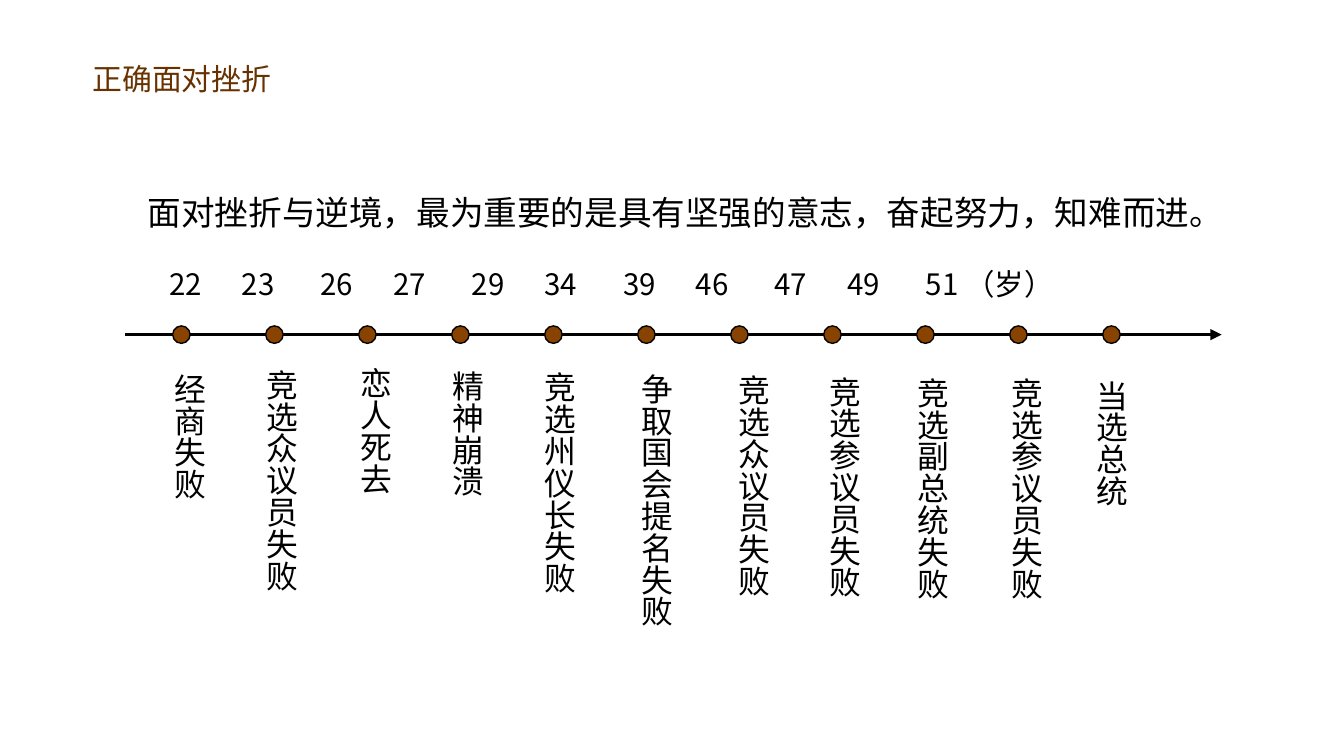
from pptx import Presentation
from pptx.dml.color import RGBColor
from pptx.enum.shapes import MSO_CONNECTOR as Link, MSO_SHAPE as Kind
from pptx.enum.text import MSO_AUTO_SIZE as Fit
from pptx.oxml.ns import qn
from pptx.util import Inches, Pt
from lxml.etree import SubElement as Sub

FACE = "Noto Sans CJK SC"
BLACK = RGBColor(0x00, 0x00, 0x00)
BROWN = RGBColor(0x67, 0x32, 0x00)
RUST = RGBColor(0x89, 0x43, 0x00)

WIDE = 10
HIGH = WIDE * 9 / 16
AXIS = 2.49
FIRST = 1.35
STEP = 6.92 / 10
PAIR = 5.63 / 5
DOT = 0.13

AGES = [22, 23, 26, 27, 29, 34, 39, 46, 47, 49, 51]
EVENTS = [
    ("经商失败", -0.24, 0.19, 1.25),
    ("竞选众议员失败", -0.25, 0.16, 2.13),
    ("恋人死去", -0.24, 0.15, 1.5),
    ("精神崩溃", -0.25, 0.17, 1.63),
    ("竞选州仪长失败", -0.26, 0.18, 2.06),
    ("争取国会提名失败", -0.23, 0.19, 2.3),
    ("竞选众议员失败", -0.2, 0.2, 2.19),
    ("竞选参议员失败", -0.21, 0.21, 2.19),
    ("竞选副总统失败", -0.25, 0.22, 2.44),
    ("竞选参议员失败", -0.24, 0.22, 2.19),
    ("当选总统", -0.3, 0.24, 1.31),
]


def col(i):
    """Return the centre of a timeline column in inches."""
    return FIRST + STEP * i


def write(slide, words, box, size, color=BLACK, wrap=True):
    """Add a text box and return its frame and paragraph."""
    frame = slide.shapes.add_textbox(*map(Inches, box)).text_frame
    frame.word_wrap = wrap
    frame.auto_size = Fit.SHAPE_TO_FIT_TEXT
    para = frame.paragraphs[0]
    run = para.add_run()
    run.text = words
    font = run.font
    font.size = Pt(size)
    font.color.rgb = color
    font.name = FACE
    Sub(font._element, qn("a:ea")).set("typeface", FACE)
    return frame, para


def space(para):
    """Put half a line before a paragraph and return its properties."""
    props = para._p.get_or_add_pPr()
    gap = Sub(props, qn("a:spcBef"))
    Sub(gap, qn("a:spcPct")).set("val", "50000")
    return props


def event(slide, i, words, shift, drop, tall):
    """Add a vertical label, shifted from its dot and dropped below the axis."""
    box = (col(i) + shift, AXIS + drop, 0.49, tall)
    frame, para = write(slide, words, box, 17)
    frame._txBody.bodyPr.set("vert", "eaVert")
    space(para)


def ages(slide):
    """Add the row of ages on paired tab stops."""
    words = "\t".join(map(str, AGES)) + " （岁）"
    para = write(slide, words, (1.16, 1.93, 8.09, 0.37), 15.8)[1]
    tabs = Sub(space(para), qn("a:tabLst"))
    for i in range(1, len(AGES)):
        stop = Sub(tabs, qn("a:tab"))
        stop.set("pos", str(Inches(i // 2 * PAIR + i % 2 * 0.54)))
        stop.set("algn", "l")


def arrow(slide):
    """Add the time axis with its arrowhead."""
    ends = map(Inches, (0.93, AXIS, 9.09, AXIS))
    link = slide.shapes.add_connector(Link.STRAIGHT, *ends)
    link.line.color.rgb = BLACK
    link.line.width = Pt(2)
    Sub(link.line._get_or_add_ln(), qn("a:tailEnd")).set("type", "triangle")
    Sub(link._element.spPr, qn("a:effectLst"))


def dot(slide, i):
    """Add one marker on the axis."""
    box = (col(i) - DOT / 2, AXIS - DOT / 2, DOT, DOT)
    mark = slide.shapes.add_shape(Kind.OVAL, *map(Inches, box))
    mark.shadow.inherit = False
    mark.fill.solid()
    mark.fill.fore_color.rgb = RUST
    mark.line.color.rgb = BLACK
    mark.line.width = Pt(0.75)


def main():
    """Build and save the slide."""
    deck = Presentation()
    deck.slide_width, deck.slide_height = Inches(WIDE), Inches(HIGH)
    slide = deck.slides.add_slide(deck.slide_layouts[6])
    write(slide, "正确面对挫折", (0.59, 0.4, 1.55, 0.37), 16, BROWN, False)
    motto = "面对挫折与逆境，最为重要的是具有坚强的意志，奋起努力，知难而进。"
    para = write(slide, motto, (1, 1.23, 8.42, 0.56), 18)[1]
    para.line_spacing = 1.5
    for i, item in enumerate(EVENTS):
        event(slide, i, *item)
    ages(slide)
    arrow(slide)
    for i in range(len(EVENTS)):
        dot(slide, i)
    deck.save("out.pptx")


if __name__ == "__main__":
    main()
